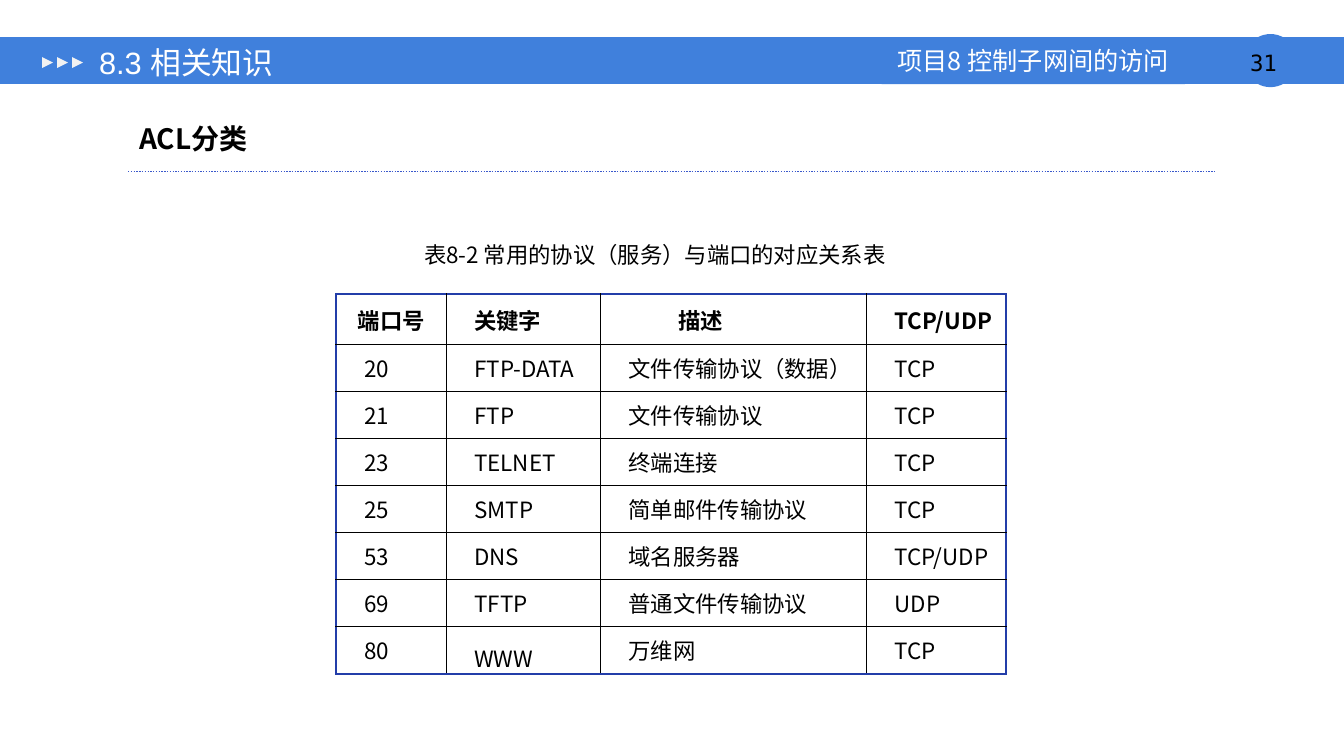
from lxml.etree import SubElement
from pptx import Presentation
from pptx.dml.color import RGBColor
from pptx.enum.dml import MSO_LINE
from pptx.enum.shapes import MSO_CONNECTOR, MSO_SHAPE
from pptx.enum.text import MSO_ANCHOR as ANCHOR, MSO_AUTO_SIZE, PP_ALIGN as ALIGN
from pptx.oxml.ns import qn
from pptx.util import Pt

PX = 9080  # EMU per px
BLUE = RGBColor(0x40, 0x80, 0xDC)
LINE_BLUE = RGBColor(0x39, 0x58, 0xCB)
FRAME_BLUE = RGBColor(0x23, 0x3D, 0xA9)
PALE = RGBColor(0xF2, 0xF2, 0xF2)
WHITE = RGBColor(0xFF, 0xFF, 0xFF)
BLACK = RGBColor(0, 0, 0)
SANS = "Noto Sans CJK SC"
SERIF = "Times New Roman"

COLUMN_WIDTHS = [110, 154, 266, 139]
HEADER_HEIGHT, ROW_HEIGHT = 50, 47
CELL_INDENT = 28
ROWS = [
    ("端口号", "关键字", "描述", "TCP/UDP"),
    ("20", "FTP-DATA", "文件传输协议（数据）", "TCP"),
    ("21", "FTP", "文件传输协议", "TCP"),
    ("23", "TELNET", "终端连接", "TCP"),
    ("25", "SMTP", "简单邮件传输协议", "TCP"),
    ("53", "DNS", "域名服务器", "TCP/UDP"),
    ("69", "TFTP", "普通文件传输协议", "UDP"),
    ("80", "WWW", "万维网", "TCP"),
]


def px(*lengths):
    return [length * PX for length in lengths]


def write(frame, text, size, font=SANS, color=BLACK, bold=False, align=ALIGN.LEFT):
    """Put one formatted paragraph into a text frame."""
    para = frame.paragraphs[0]
    para.text = text
    para.alignment = align
    para.font.size = Pt(size)
    para.font.name = font
    para.font.bold = bold
    para.font.color.rgb = color
    defaults = para._p.pPr.find(qn("a:defRPr"))
    SubElement(defaults, qn("a:ea")).set("typeface", SANS)
    return para


def set_frame(frame, insets, anchor):
    frame.word_wrap = True
    frame.auto_size = MSO_AUTO_SIZE.NONE
    frame.vertical_anchor = anchor
    (frame.margin_left, frame.margin_top,
     frame.margin_right, frame.margin_bottom) = px(*insets)


def indent(para, margin, first_line=0):
    properties = para._p.get_or_add_pPr()
    properties.set("marL", str(margin * PX))
    properties.set("indent", str(first_line * PX))


def add_block(page, kind, bounds, color):
    block = page.shapes.add_shape(kind, *px(*bounds))
    block.shadow.inherit = False
    block.fill.solid()
    block.fill.fore_color.rgb = color
    block.line.fill.background()
    return block


def add_text(page, bounds, insets, text, size, **style):
    box = page.shapes.add_textbox(*px(*bounds))
    set_frame(box.text_frame, insets, ANCHOR.TOP)
    return write(box.text_frame, text, size, **style)


def add_header(page):
    # Band and page number
    add_block(page, MSO_SHAPE.RECTANGLE, (0, 37, 1343, 47), BLUE)
    add_block(page, MSO_SHAPE.RECTANGLE, (0, 84, 1343, 8), WHITE)
    add_block(page, MSO_SHAPE.OVAL, (1243, 34, 53, 53), BLUE)
    number = add_block(page, MSO_SHAPE.RECTANGLE, (1243, 49, 53, 27), BLUE)
    set_frame(number.text_frame, (0, 0, 14, 0), ANCHOR.TOP)
    write(number.text_frame, "31", 16, font="DejaVu Sans Mono", align=ALIGN.CENTER)

    # Project name, on one line
    project = add_block(page, MSO_SHAPE.RECTANGLE, (881, 37, 303, 47), BLUE)
    set_frame(project.text_frame, (0, 0, 0, 0), ANCHOR.MIDDLE)
    project.text_frame.word_wrap = False
    write(project.text_frame, "项目8 控制子网间的访问", 18, color=WHITE, align=ALIGN.CENTER)

    # Arrow marks
    for step in range(3):
        mark = add_block(page, MSO_SHAPE.ISOSCELES_TRIANGLE,
                         (42 + 15 * step, 57, 11, 11), PALE)
        mark.rotation = 90


def add_title(page):
    title = page.shapes.title
    title.left, title.top, title.width, title.height = px(86, 40, 725, 44)
    set_frame(title.text_frame, (13, 7, 13, 7), ANCHOR.MIDDLE)
    write(title.text_frame, "8.3 相关知识", 22, font="Arial", color=WHITE)
    page.shapes._spTree.append(title._element)  # in front of the band


def add_dotted_line(page, left, right, y):
    rule = page.shapes.add_connector(MSO_CONNECTOR.STRAIGHT, *px(left, y, right, y))
    rule.line.color.rgb = LINE_BLUE
    rule.line.width = Pt(1)
    rule.line.dash_style = MSO_LINE.ROUND_DOT
    SubElement(rule._element.spPr, qn("a:effectLst"))


def set_borders(cell, outer_sides):
    properties = cell._tc.get_or_add_tcPr()
    for side in "LRTB":
        outer = side in outer_sides
        border = SubElement(properties, qn(f"a:ln{side}"), w=str(Pt(1.5 if outer else 1)))
        fill = SubElement(border, qn("a:solidFill"))
        SubElement(fill, qn("a:srgbClr"), val=str(FRAME_BLUE if outer else BLACK))


def add_port_table(page):
    last_row, last_column = len(ROWS) - 1, len(COLUMN_WIDTHS) - 1
    height = HEADER_HEIGHT + ROW_HEIGHT * last_row
    table = page.shapes.add_table(len(ROWS), len(COLUMN_WIDTHS),
                                  *px(336, 294, sum(COLUMN_WIDTHS), height)).table
    table.first_row = table.horz_banding = False
    for column, width in zip(table.columns, COLUMN_WIDTHS):
        column.width = width * PX
    for r, texts in enumerate(ROWS):
        table.rows[r].height = (ROW_HEIGHT if r else HEADER_HEIGHT) * PX
        for c, text in enumerate(texts):
            cell = table.cell(r, c)
            cell.margin_left = cell.margin_right = cell.margin_top = cell.margin_bottom = 0
            cell.vertical_anchor = ANCHOR.BOTTOM if text == "WWW" else ANCHOR.MIDDLE
            serif = c == 2 or (r == 0 and c < last_column)
            para = write(cell.text_frame, text, 16, font=SERIF if serif else SANS,
                         bold=r == 0, align=ALIGN.JUSTIFY)
            if r == c == 0:
                para.alignment = ALIGN.CENTER
            else:
                indent(para, CELL_INDENT, 50 if text == "描述" else 0)
            edges = {"L": c == 0, "R": c == last_column, "T": r == 0, "B": r == last_row}
            set_borders(cell, [side for side, outer in edges.items() if outer])
            cell.fill.background()


def main():
    deck = Presentation()
    deck.slide_width, deck.slide_height = px(1343, 755)
    page = deck.slides.add_slide(deck.slide_layouts[5])

    add_header(page)
    add_title(page)

    # Section heading
    heading = add_text(page, (93, 108, 1183, 51), (13, 7, 13, 7), "ACL分类", 20, bold=True)
    heading.line_spacing = 1.2
    heading.space_before = heading.space_after = Pt(6)
    indent(heading, 0, 33)
    add_dotted_line(page, 128, 1214, 171)

    # Port table and its caption
    add_port_table(page)
    add_text(page, (340, 236, 629, 37), (10, 5, 10, 5),
             "表8-2 常用的协议（服务）与端口的对应关系表", 16, align=ALIGN.CENTER)

    deck.save("out.pptx")


if __name__ == "__main__":
    main()
